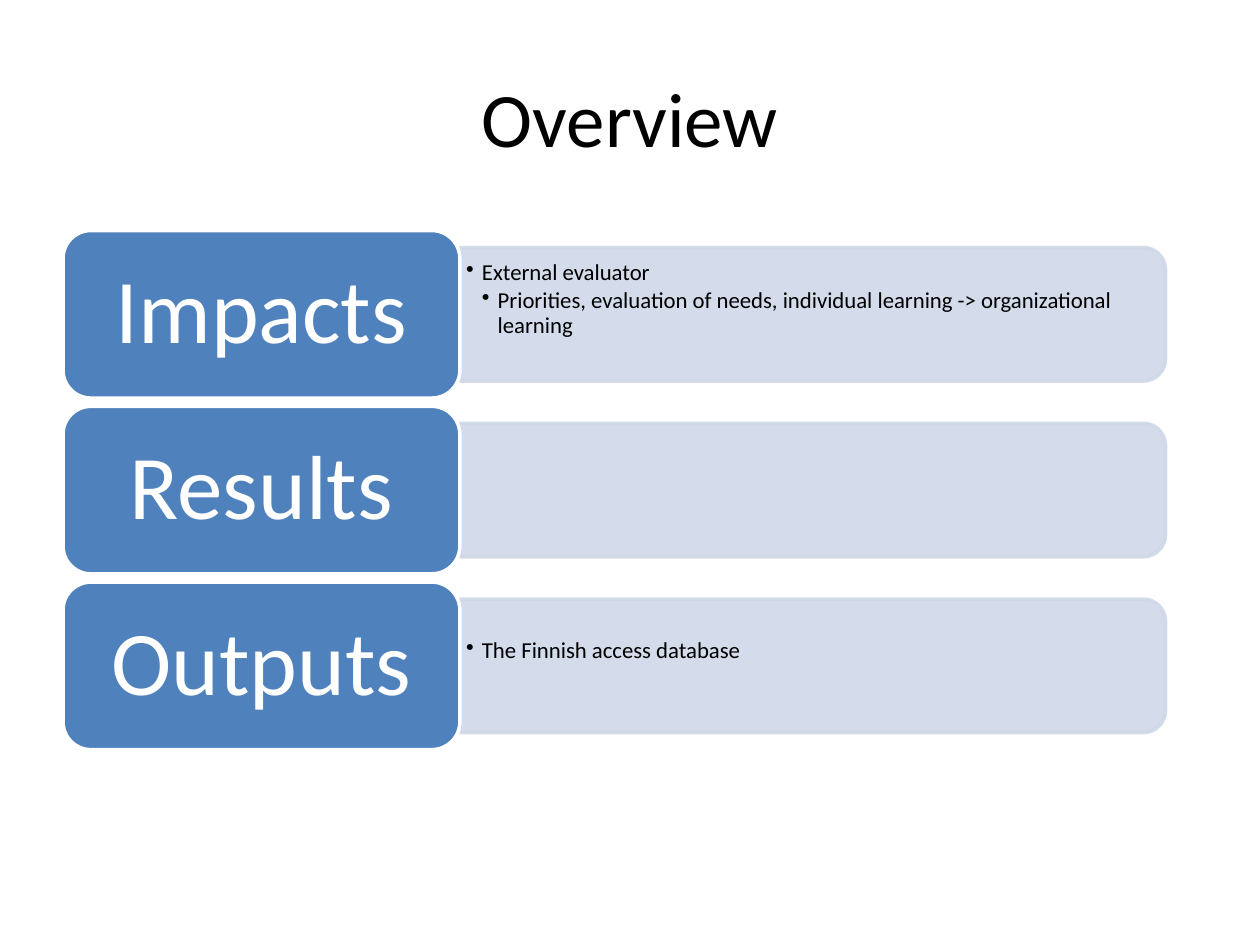
import pptx
import pptx.dml.color
import pptx.enum.shapes
import pptx.enum.text
import pptx.oxml.ns
import pptx.util
from lxml import etree

Inches = pptx.util.Inches
Shapes = pptx.enum.shapes.MSO_SHAPE
Align = pptx.enum.text.PP_ALIGN

COLOURS = {"black": "000000", "white": "FFFFFF", "label": "4F81BD", "bar": "D0D8E8"}
FONT = "Calibri"

LEFT, LABEL_WIDTH, BAR_WIDTH = 0.5, 3.15, 5.6
FIRST_TOP, LAST_TOP = 1.83, 4.62
LABEL_HEIGHT, BAR_HEIGHT, DETAIL_HEIGHT = 1.33, 1.06, 0.96
BULLET_STEP = 0.125

# Each row: label, bullets as (level, text)
ROWS = [
    ("Impacts", [
        (1, "External evaluator"),
        (2, "Priorities, evaluation of needs, individual learning -> organizational learning"),
    ]),
    ("Results", []),
    ("Outputs", [(1, "The Finnish access database")]),
]


def rgb(name):
    return pptx.dml.color.RGBColor.from_string(COLOURS[name])


def add_bullet(paragraph, level):
    properties = paragraph._p.get_or_add_pPr()
    properties.set("marL", str(Inches(BULLET_STEP * level)))
    properties.set("indent", str(-Inches(BULLET_STEP)))
    bullet = etree.SubElement(properties, pptx.oxml.ns.qn("a:buChar"))
    bullet.set("char", "•")


def write(paragraph, text, size=13, colour="black", align=Align.LEFT, level=0,
          line_spacing=None, after=None):
    if level:
        add_bullet(paragraph, level)
    paragraph.alignment = align
    paragraph.line_spacing = line_spacing
    if after is not None:
        paragraph.space_after = pptx.util.Pt(after)
    run = paragraph.add_run()
    run.text = text
    run.font.name = FONT
    run.font.size = pptx.util.Pt(size)
    run.font.color.rgb = rgb(colour)


def set_frame(frame, horizontal, top, bottom):
    """Wrap the text, centre it vertically and set its insets in inches."""
    frame.word_wrap = True
    frame.vertical_anchor = pptx.enum.text.MSO_ANCHOR.MIDDLE
    frame.margin_left = frame.margin_right = Inches(horizontal)
    frame.margin_top, frame.margin_bottom = Inches(top), Inches(bottom)


def set_opacity(shape, percent):
    for colour in shape._element.spPr.iter(pptx.oxml.ns.qn("a:srgbClr")):
        alpha = etree.SubElement(colour, pptx.oxml.ns.qn("a:alpha"))
        alpha.set("val", str(percent * 1000))


class OverviewSlide:
    def __init__(self, presentation):
        self.slide = presentation.slides.add_slide(presentation.slide_layouts[6])
        self.pitch = (LAST_TOP - FIRST_TOP) / (len(ROWS) - 1)

    def centre(self, row):
        return FIRST_TOP + row * self.pitch + LABEL_HEIGHT / 2

    def box(self, kind, left, top, width, height, fill, line):
        shape = self.slide.shapes.add_shape(
            kind, Inches(left), Inches(top), Inches(width), Inches(height))
        shape.shadow.inherit = False
        shape.fill.solid()
        shape.fill.fore_color.rgb = rgb(fill)
        shape.line.color.rgb = rgb(line)
        shape.line.width = pptx.util.Pt(2)
        return shape

    def text_box(self, left, top, width, height):
        return self.slide.shapes.add_textbox(
            Inches(left), Inches(top), Inches(width), Inches(height)).text_frame

    def title(self, text):
        frame = self.text_box(0.5, 0.3, 9, 1.25)
        set_frame(frame, 0.1, 0.05, 0.05)
        write(frame.paragraphs[0], text, size=44, align=Align.CENTER)

    def bar(self, row):
        """Turn an upright shape by 90 degrees so its rounded end faces right."""
        middle = LEFT + LABEL_WIDTH + BAR_WIDTH / 2
        shape = self.box(Shapes.ROUND_2_SAME_RECTANGLE, middle - BAR_HEIGHT / 2,
                         self.centre(row) - BAR_WIDTH / 2, BAR_HEIGHT, BAR_WIDTH,
                         "bar", "bar")
        shape.rotation = 90
        set_opacity(shape, 90)

    def details(self, row, bullets):
        frame = self.text_box(LEFT + LABEL_WIDTH, self.centre(row) - DETAIL_HEIGHT / 2,
                              BAR_WIDTH - 0.05, DETAIL_HEIGHT)
        # The deeper bottom inset lifts the text by half a line
        set_frame(frame, 0.05, 0.03, 0.26)
        for index, (level, text) in enumerate(bullets):
            paragraph = frame.add_paragraph() if index else frame.paragraphs[0]
            write(paragraph, text, level=level, line_spacing=0.9, after=2)

    def label(self, row, text):
        shape = self.box(Shapes.ROUNDED_RECTANGLE, LEFT, self.centre(row) - LABEL_HEIGHT / 2,
                         LABEL_WIDTH, LABEL_HEIGHT, "label", "white")
        set_frame(shape.text_frame, 0.22, 0.11, 0.11)
        write(shape.text_frame.paragraphs[0], text, size=52, colour="white",
              align=Align.CENTER, line_spacing=0.9)


def main():
    presentation = pptx.Presentation()
    presentation.slide_width, presentation.slide_height = Inches(10), Inches(7.5)
    overview = OverviewSlide(presentation)
    overview.title("Overview")
    for row, (label, bullets) in enumerate(ROWS):
        overview.bar(row)
        if bullets:
            overview.details(row, bullets)
        overview.label(row, label)
    presentation.save("out.pptx")


if __name__ == "__main__":
    main()
